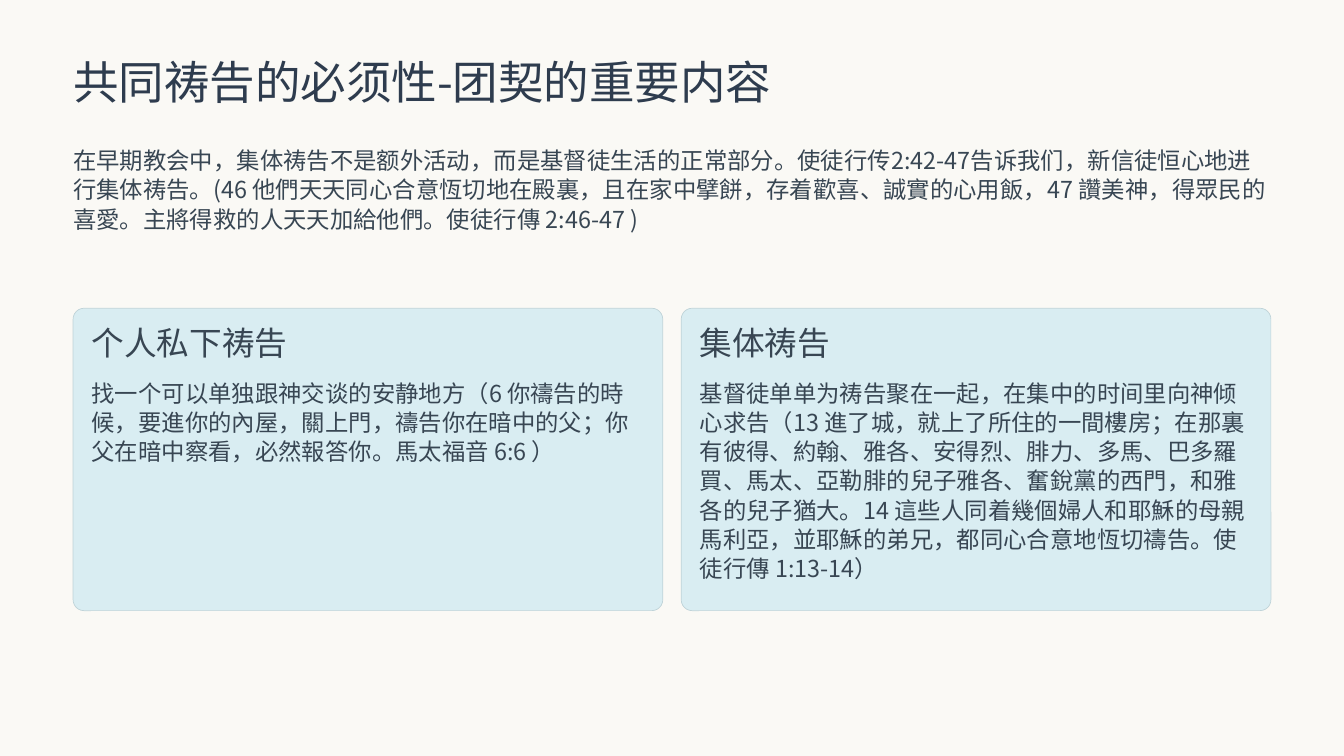
"""Build the slide on praying together, with two cards comparing forms of prayer."""
import pptx
import pptx.dml.color
import pptx.enum.shapes
import pptx.enum.text
import pptx.oxml.ns
import pptx.util
from lxml import etree

TITLE = "共同祷告的必须性-团契的重要内容"
INTRO = (
    "在早期教会中，集体祷告不是额外活动，而是基督徒生活的正常部分。"
    "使徒行传2:42-47告诉我们，新信徒恒心地进行集体祷告。"
    "(46 他們天天同心合意恆切地在殿裏，且在家中擘餅，存着歡喜、誠實的心用飯，"
    "47 讚美神，得眾民的喜愛。主將得救的人天天加給他們。使徒行傳 2:46-47 )"
)
CARDS = [
    (
        "个人私下祷告",
        "找一个可以单独跟神交谈的安静地方（6 你禱告的時候，要進你的內屋，關上門，"
        "禱告你在暗中的父；你父在暗中察看，必然報答你。馬太福音 6:6 ）",
    ),
    (
        "集体祷告",
        "基督徒单单为祷告聚在一起，在集中的时间里向神倾心求告（13 進了城，"
        "就上了所住的一間樓房；在那裏有彼得、約翰、雅各、安得烈、腓力、多馬、"
        "巴多羅買、馬太、亞勒腓的兒子雅各、奮銳黨的西門，和雅各的兒子猶大。"
        "14 這些人同着幾個婦人和耶穌的母親馬利亞，並耶穌的弟兄，"
        "都同心合意地恆切禱告。使徒行傳 1:13-14）",
    ),
]

THEME = {
    "font": "Noto Sans CJK SC",
    "page": "FAF9F5",
    "card": "D9EDF2",
    "border": "BFD3D8",
    "title": {"size": 39, "color": "2E3C4E", "leading": 48.5, "wrap": True},
    "heading": {"size": 28, "color": "384653", "leading": 24, "wrap": False},
    "body": {"size": 20, "color": "384653", "leading": 25, "wrap": True},
}

WIDTH, HEIGHT = 16, 9
MARGIN = 0.87
GAP = 0.22
CONTENT_WIDTH = WIDTH - 2 * MARGIN
CARD_WIDTH = (CONTENT_WIDTH - GAP * (len(CARDS) - 1)) / len(CARDS)
CARD_TOP, CARD_HEIGHT = 3.67, 3.6
PADDING = 0.22


def color(value):
    return pptx.dml.color.RGBColor.from_string(value)


def inches(*lengths):
    return [pptx.util.Inches(length) for length in lengths]


def assign(target, values):
    for name, value in values.items():
        setattr(target, name, value)


def write(box, text, style):
    frame = box.text_frame
    assign(frame, {
        "margin_left": 0, "margin_top": 0, "margin_right": 0, "margin_bottom": 0,
        "word_wrap": style["wrap"],
        "auto_size": pptx.enum.text.MSO_AUTO_SIZE.NONE,
        "vertical_anchor": pptx.enum.text.MSO_ANCHOR.TOP,
    })
    para = frame.paragraphs[0]
    assign(para, {
        "alignment": pptx.enum.text.PP_ALIGN.LEFT,
        "line_spacing": pptx.util.Pt(style["leading"]),
    })
    span = para.add_run()
    span.text = text
    assign(span.font, {"name": THEME["font"], "size": pptx.util.Pt(style["size"])})
    span.font.color.rgb = color(style["color"])
    east_asian = etree.SubElement(span.font._element, pptx.oxml.ns.qn("a:ea"))
    east_asian.set("typeface", THEME["font"])


def add_text(page, place, text, style):
    write(page.shapes.add_textbox(*inches(*place)), text, style)


def add_card(page, left, heading, body):
    card = page.shapes.add_shape(
        pptx.enum.shapes.MSO_SHAPE.ROUNDED_RECTANGLE,
        *inches(left, CARD_TOP, CARD_WIDTH, CARD_HEIGHT),
    )
    card.adjustments[0] = 0.036
    card.shadow.inherit = False
    card.fill.solid()
    card.fill.fore_color.rgb = color(THEME["card"])
    card.line.color.rgb = color(THEME["border"])
    card.line.width = pptx.util.Pt(0.6)
    text_left, text_width = left + PADDING, CARD_WIDTH - 2 * PADDING
    add_text(page, (text_left, CARD_TOP + 0.31, 2.71, 0.34), heading, THEME["heading"])
    add_text(page, (text_left, CARD_TOP + 0.83, text_width, 1.63), body, THEME["body"])


def main():
    deck = pptx.Presentation()
    deck.slide_width, deck.slide_height = inches(WIDTH, HEIGHT)
    page = deck.slides.add_slide(deck.slide_layouts.get_by_name("Title Only"))
    page.background.fill.solid()
    page.background.fill.fore_color.rgb = color(THEME["page"])
    title = page.shapes.title
    assign(title, dict(zip(("left", "top", "width", "height"), inches(MARGIN, 0.62, 8.9, 0.68))))
    write(title, TITLE, THEME["title"])
    add_text(page, (MARGIN, 1.73, CONTENT_WIDTH, 0.65), INTRO, THEME["body"])
    for index, (heading, body) in enumerate(CARDS):
        add_card(page, MARGIN + index * (CARD_WIDTH + GAP), heading, body)
    deck.save("out.pptx")


if __name__ == "__main__":
    main()
